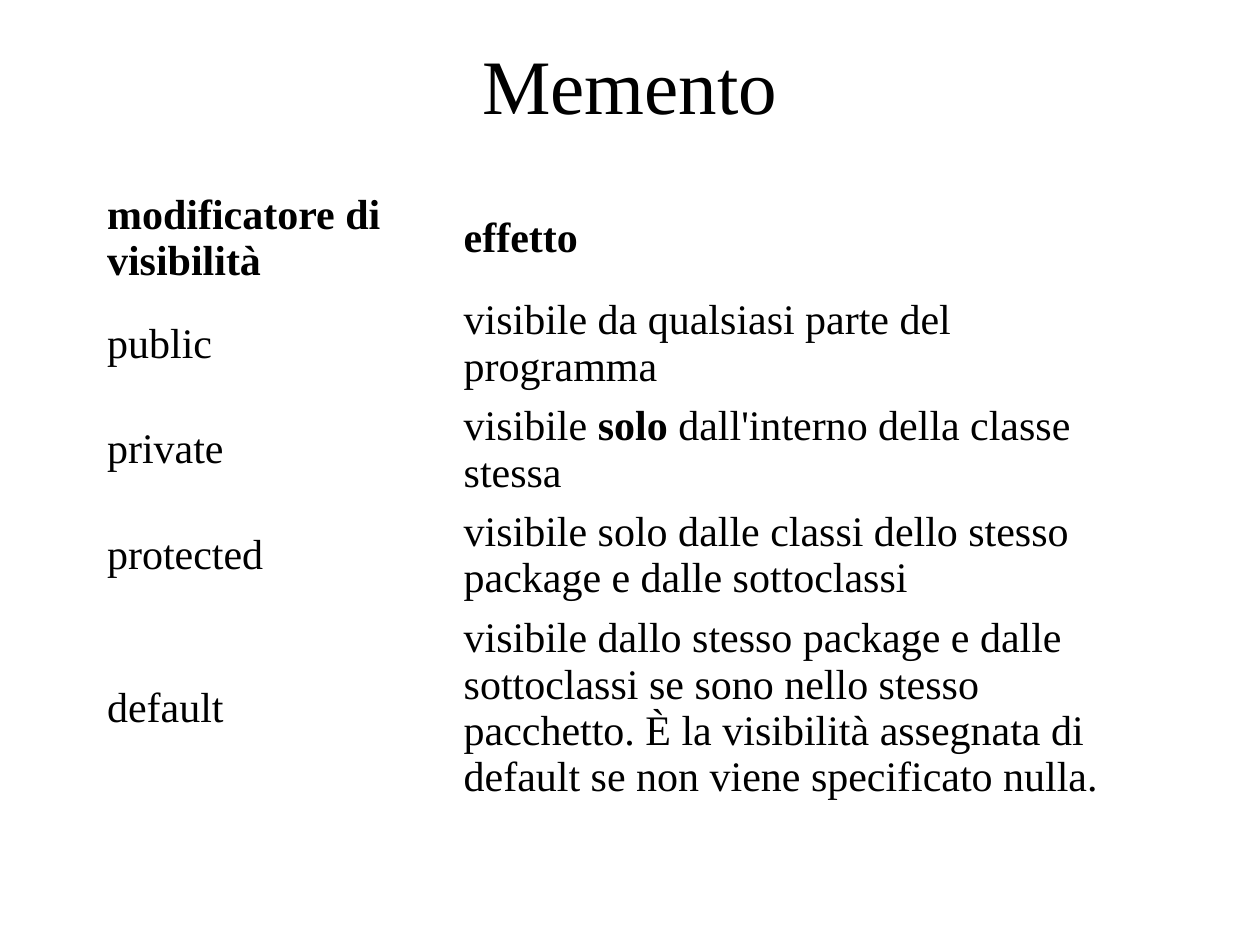
"""Build a slide with a table of Java visibility modifiers."""
import pptx
import pptx.dml.color
import pptx.enum.text
import pptx.util
from pptx.util import Inches

BLACK = pptx.dml.color.RGBColor(0, 0, 0)
WHITE = pptx.dml.color.RGBColor(255, 255, 255)
MIDDLE = pptx.enum.text.MSO_ANCHOR.MIDDLE
CENTER = pptx.enum.text.PP_ALIGN.CENTER
COLUMN_WIDTHS = (2.83, 5.67)
ROW_HEIGHTS = (0.84, 0.84, 0.84, 0.84, 1.58)
HEADER = ("modificatore di visibilità", "effetto")
MODIFIERS = (
    ("public", "visibile da qualsiasi parte del programma"),
    ("private", "visibile **solo** dall'interno della classe stessa"),
    ("protected", "visibile solo dalle classi dello stesso package e dalle sottoclassi"),
    ("default", "visibile dallo stesso package e dalle sottoclassi se sono nello stesso "
                "pacchetto. È la visibilità assegnata di default se non viene specificato nulla."),
)


class SlideBuilder:
    """Hold the text style and the current slide."""

    def __init__(self, slide):
        self.slide = slide
        self.font_name = "Times New Roman"
        self.title_size = 44
        self.table_size = 24

    def add_text(self, paragraph, text, size, bold=False):
        """Add text, with the parts between double asterisks in bold."""
        for index, part in enumerate(text.split("**")):
            run = paragraph.add_run()
            run.text = part
            values = {"name": self.font_name, "size": pptx.util.Pt(size),
                      "bold": bold or index % 2 == 1}
            for name, value in values.items():
                setattr(run.font, name, value)
            run.font.color.rgb = BLACK

    def title(self, text, left, top, width, height):
        """Place and fill the title placeholder."""
        shape = self.slide.shapes.title
        values = {"left": left, "top": top, "width": width, "height": height}
        for name, value in values.items():
            setattr(shape, name, Inches(value))
        shape.text_frame.vertical_anchor = MIDDLE
        paragraph = shape.text_frame.paragraphs[0]
        paragraph.alignment = CENTER
        self.add_text(paragraph, text, self.title_size)

    def table(self, rows, left, top, widths, heights):
        """Add a plain table whose first row is a bold header."""
        shape = self.slide.shapes.add_table(
            len(rows), len(widths), Inches(left), Inches(top),
            Inches(sum(widths)), Inches(sum(heights)))
        table = shape.table
        table.horz_banding = False
        for column, width in zip(table.columns, widths):
            column.width = Inches(width)
        for index, (row, height, texts) in enumerate(zip(table.rows, heights, rows)):
            row.height = Inches(height)
            for cell, text in zip(row.cells, texts):
                cell.fill.solid()
                cell.fill.fore_color.rgb = WHITE
                cell.vertical_anchor = MIDDLE
                self.add_text(cell.text_frame.paragraphs[0], text, self.table_size, index == 0)


def main():
    """Create and save the presentation."""
    presentation = pptx.Presentation()
    presentation.slide_width = Inches(10)
    presentation.slide_height = Inches(7.5)
    builder = SlideBuilder(presentation.slides.add_slide(presentation.slide_layouts[5]))
    builder.title("Memento", 0.75, 0.04, 8.5, 1.25)
    builder.table((HEADER, *MODIFIERS), 0.75, 1.47, COLUMN_WIDTHS, ROW_HEIGHTS)
    presentation.save("out.pptx")


if __name__ == "__main__":
    main()
